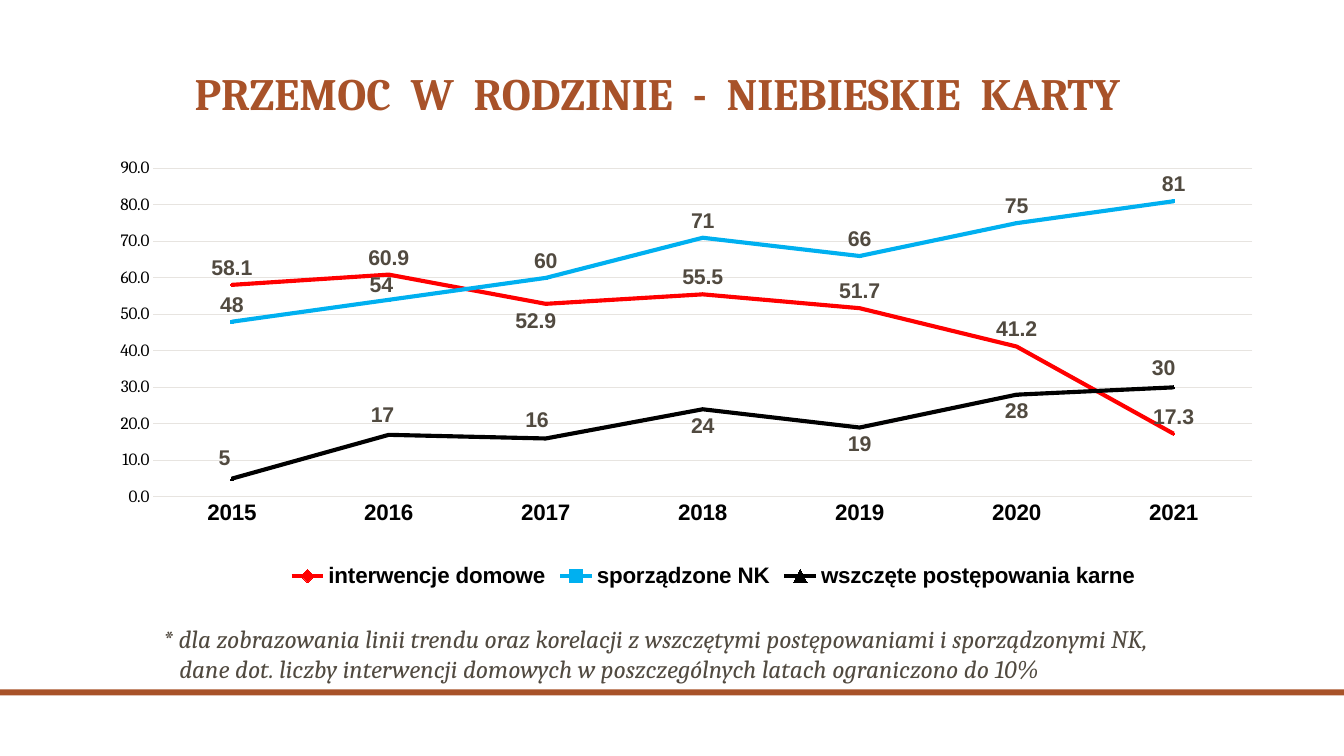
from lxml.etree import SubElement
from pptx import Presentation
from pptx.chart.data import CategoryChartData
from pptx.dml.color import RGBColor
from pptx.enum.chart import XL_CHART_TYPE as ChartType, XL_LABEL_POSITION as Place
from pptx.enum.chart import XL_LEGEND_POSITION as LegendPlace, XL_MARKER_STYLE as Marker
from pptx.enum.chart import XL_TICK_MARK as Tick
from pptx.enum.shapes import MSO_SHAPE as Shape
from pptx.enum.text import MSO_ANCHOR as Anchor, PP_ALIGN as Align
from pptx.oxml import parse_xml
from pptx.oxml.ns import nsdecls, qn
from pptx.util import Inches, Pt

BROWN, GREY, PALE, BLACK = "A85229", "514A40", "E7E4E0", "000000"


def style(font, color, **values):
    font.color.rgb = RGBColor.from_string(color)
    for name, value in values.items():
        setattr(font, name, value)


def manual_layout(**values):
    layout = parse_xml(f"<c:layout {nsdecls('c')}><c:manualLayout/></c:layout>")
    for name, value in values.items():
        SubElement(layout[0], qn(f"c:{name}")).set("val", str(value))
    return layout


deck = Presentation()
deck.slide_width, deck.slide_height = Inches(13.33), Inches(7.5)
page = deck.slides.add_slide(deck.slide_layouts[6])

bar = page.shapes.add_shape(Shape.RECTANGLE, 0, Inches(6.84), Inches(13.33), Inches(0.06))
bar.shadow.inherit = False
bar.fill.solid()
bar.fill.fore_color.rgb = RGBColor.from_string(BROWN)
bar.line.fill.background()

title = page.shapes.add_textbox(Inches(1.52), Inches(0.4), Inches(10), Inches(1.1)).text_frame
title.word_wrap = True
title.vertical_anchor = Anchor.MIDDLE
para = title.paragraphs[0]
para.alignment = Align.CENTER
para.line_spacing = 0.9
for index, word in enumerate("PRZEMOC W RODZINIE - NIEBIESKIE KARTY".split()):
    for text in ([" ", word] if index else [word]):
        span = para.add_run()
        span.text = text
        style(span.font, BROWN, name="Cambria", size=Pt(32), bold=True)
        if text == " ":
            span.font._element.set("spc", "700")

series_formats = [
    {"name": "interwencje domowe", "color": "FF0000", "marker": Marker.DIAMOND,
     "values": (58.1, 60.9, 52.9, 55.5, 51.7, 41.2, 17.3), "place": Place.ABOVE,
     "moved": {2: (Place.BELOW, -0.008, 0)}},
    {"name": "sporządzone NK", "color": "00B0F0", "marker": Marker.SQUARE,
     "values": (48, 54, 60, 71, 66, 75, 81), "place": Place.ABOVE,
     "moved": {1: (Place.ABOVE, -0.006, 0.006)}},
    {"name": "wszczęte postępowania karne", "color": BLACK, "marker": Marker.TRIANGLE,
     "values": (5, 17, 16, 24, 19, 28, 30), "place": Place.BELOW,
     "moved": {0: (Place.ABOVE, -0.006, -0.008), 1: (Place.ABOVE, -0.005, -0.006),
               2: (Place.ABOVE, -0.007, -0.004), 6: (Place.ABOVE, -0.008, -0.006)}},
]
data = CategoryChartData()
data.categories = [str(year) for year in range(2015, 2022)]
for entry in series_formats:
    data.add_series(entry["name"], entry["values"])
chart = page.shapes.add_chart(ChartType.LINE_MARKERS, Inches(0.89), Inches(1.25),
                              Inches(12.37), Inches(4.63), data).chart
style(chart.font, GREY, name="Cambria", size=Pt(10))
chart.has_title = False
chart.has_legend = True
chart.legend.position = LegendPlace.BOTTOM
chart.legend.include_in_layout = False
bold_arial = {"name": "Arial", "size": Pt(16), "bold": True}
style(chart.legend.font, BLACK, **bold_arial)

years, scale = chart.category_axis, chart.value_axis
style(years.tick_labels.font, BLACK, **bold_arial)
style(scale.tick_labels.font, BLACK, name="Cambria", size=Pt(12.3))
scale.minimum_scale, scale.maximum_scale, scale.major_unit = 0, 90, 10
scale.tick_labels.number_format = "#,##0.0"
scale.tick_labels.number_format_is_linked = False
scale.format.line.fill.background()
for axis in (years, scale):
    axis.major_tick_mark = axis.minor_tick_mark = Tick.NONE
for line in (years.format.line, scale.major_gridlines.format.line):
    line.color.rgb = RGBColor.from_string(PALE)
    line.width = Pt(0.77)

plot_area = chart.plots[0]._element.getparent()
for old in plot_area.findall(qn("c:layout")):
    plot_area.remove(old)
plot_area.insert(0, manual_layout(layoutTarget="inner", xMode="edge", yMode="edge",
                                  x=0.051, y=0.091, w=0.881, h=0.704))
chart.plots[0].vary_by_categories = False

label_font = {"name": "Arial", "size": Pt(15.2), "bold": True}
for series, entry in zip(chart.plots[0].series, series_formats):
    color = RGBColor.from_string(entry["color"])
    series.smooth = False
    series.format.line.color.rgb = color
    series.format.line.width = Pt(2.95)
    series.marker.style = entry["marker"]
    series.marker.size = 2
    series.marker.format.fill.solid()
    series.marker.format.fill.fore_color.rgb = color
    series.marker.format.line.color.rgb = color
    labels = series.data_labels
    labels.show_value = True
    labels.position = entry["place"]
    style(labels.font, GREY, **label_font)
    for index, (place, x, y) in entry["moved"].items():
        label = series.points[index].data_label
        style(label.font, GREY, **label_font)
        label.position = place
        label_xml = labels._element.findall(qn("c:dLbl"))[-1]
        label_xml.insert(1, manual_layout(x=x, y=y))

note = page.shapes.add_textbox(Inches(1.52), Inches(6.13), Inches(10.36), Inches(0.71)).text_frame
note.word_wrap = True
para = note.paragraphs[0]
hanging = Inches(0.16)
para._p.get_or_add_pPr().set("marL", str(hanging))
para._p.get_or_add_pPr().set("indent", str(-hanging))
for index, text in enumerate((
        "* dla zobrazowania linii trendu oraz korelacji z wszczętymi postępowaniami i sporządzonymi NK,",
        "dane dot. liczby interwencji domowych w poszczególnych latach ograniczono do 10%")):
    if index:
        para.add_line_break()
    span = para.add_run()
    span.text = text
    style(span.font, GREY, name="Cambria", size=Pt(18), italic=True)

deck.save("out.pptx")
